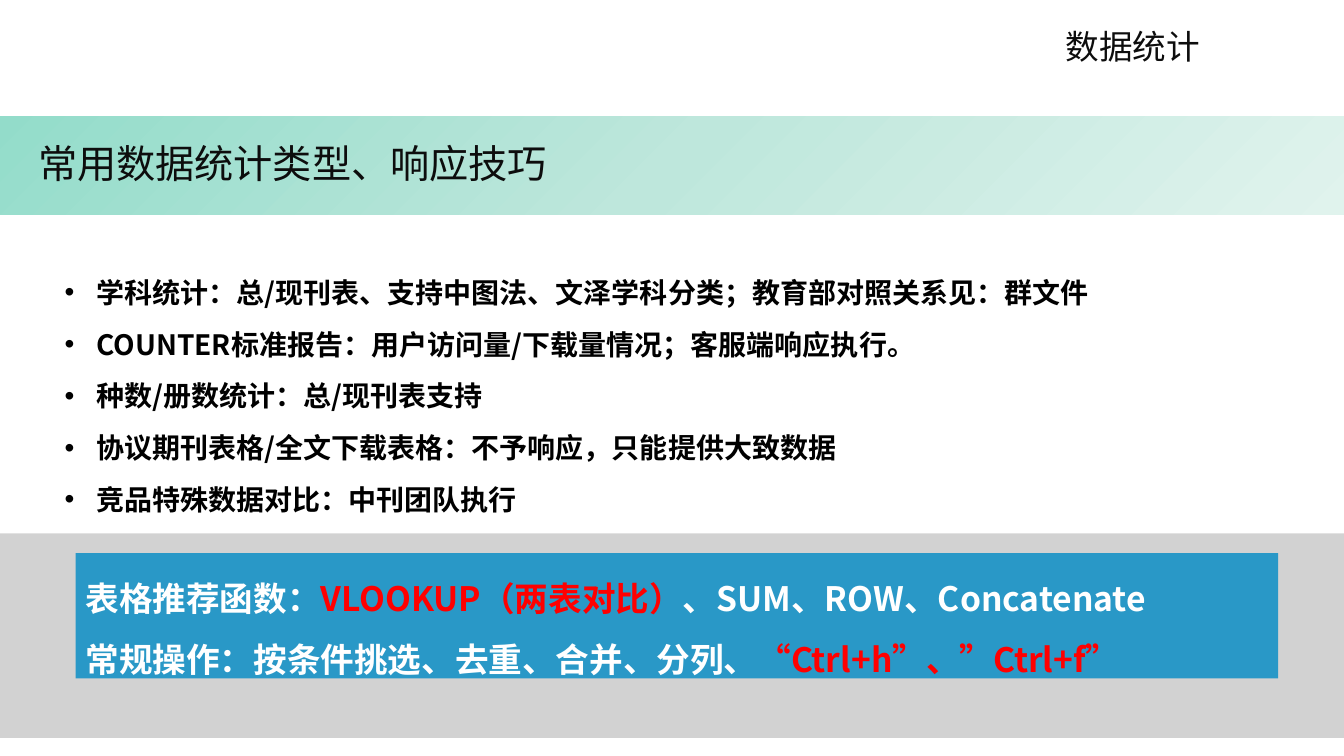
"""Builds the slide on common data statistics types and response techniques."""
from copy import deepcopy
from dataclasses import dataclass

from lxml.etree import SubElement
from pptx import Presentation
from pptx.dml.color import RGBColor as Rgb
from pptx.enum.shapes import MSO_SHAPE as Shape
from pptx.enum.text import MSO_ANCHOR as Anchor, MSO_AUTO_SIZE as AutoSize, PP_ALIGN as Align
from pptx.oxml.ns import qn
from pptx.util import Pt


@dataclass(frozen=True)
class Theme:
    font: str = "Noto Sans CJK SC"
    ink: str = "0D0D0D"
    body: str = "000000"
    light: str = "FFFFFF"
    accent: str = "FF0000"
    panel: str = "2998C7"
    floor: str = "3F3F3F"
    floor_alpha: int = 23
    band: tuple = ((0, "93DCCA"), (0.5, "BEE7DC"), (1, "E0F3ED"))
    title_size: int = 28
    label_size: int = 24
    list_size: int = 20


class SlideBuilder:
    def __init__(self, theme, slide):
        self.theme, self.slide = theme, slide

    def set_text(self, shape, paragraphs, size, bold=False, spacing=None, align=Align.LEFT):
        frame = shape.text_frame
        frame.word_wrap, frame.auto_size = True, AutoSize.NONE
        frame.vertical_anchor = Anchor.TOP
        for number, runs in enumerate(paragraphs):
            line = frame.add_paragraph() if number else frame.paragraphs[0]
            line.alignment, line.line_spacing = align, spacing
            line.space_before = line.space_after = Pt(0)
            for text, color in runs:
                run = line.add_run()
                run.text = text
                font = run.font
                font.name, font.size, font.bold = self.theme.font, Pt(size), bold
                font.color.rgb = Rgb.from_string(color)
                SubElement(font._element, qn("a:ea"), typeface=self.theme.font)

    def placeholder(self, index, box):
        holder = self.slide.placeholders[index]
        holder.left, holder.top, holder.width, holder.height = map(Pt, box)
        holder.element.getparent().append(holder.element)
        return holder

    def title(self, text, box):
        self.set_text(self.placeholder(0, box), [[(text, self.theme.ink)]], self.theme.title_size)

    def bullets(self, items, box, spacing, indent):
        holder = self.placeholder(1, box)
        lines = [[(item, self.theme.body)] for item in items]
        self.set_text(holder, lines, self.theme.list_size, True, Pt(spacing))
        for line in holder.text_frame.paragraphs:
            properties = line._p.get_or_add_pPr()
            properties.set("marL", str(Pt(indent)))
            properties.set("indent", str(-Pt(indent)))

    def label(self, text, box):
        label = self.slide.shapes.add_textbox(*map(Pt, box))
        self.set_text(label, [[(text, self.theme.ink)]], self.theme.label_size,
                      spacing=1.3, align=Align.JUSTIFY)

    def rectangle(self, box):
        rectangle = self.slide.shapes.add_shape(Shape.RECTANGLE, *map(Pt, box))
        rectangle.shadow.inherit = False
        rectangle.line.fill.background()
        return rectangle

    def band(self, box):
        fill = self.rectangle(box).fill
        fill.gradient()
        fill.gradient_angle = 315
        first = fill._fill._gradFill.gsLst[0]
        first.addnext(deepcopy(first))
        for stop, (position, color) in zip(fill.gradient_stops, self.theme.band):
            stop.position = position
            stop.color.rgb = Rgb.from_string(color)

    def floor(self, points):
        start, *rest = points
        outline = self.slide.shapes.build_freeform(*map(Pt, start))
        outline.add_line_segments([tuple(map(Pt, point)) for point in rest])
        floor = outline.convert_to_shape()
        floor.shadow.inherit = False
        floor.line.fill.background()
        floor.fill.solid()
        floor.fill.fore_color.rgb = Rgb.from_string(self.theme.floor)
        color = floor.fill._xPr.find(qn("a:solidFill"))[0]
        SubElement(color, qn("a:alpha"), val=str(self.theme.floor_alpha * 1000))

    def panel(self, paragraphs, box):
        panel = self.rectangle(box)
        panel.fill.solid()
        panel.fill.fore_color.rgb = Rgb.from_string(self.theme.panel)
        self.set_text(panel, paragraphs, self.theme.label_size, True, 1.5)


def main():
    deck = Presentation()
    deck.slide_width, deck.slide_height = Pt(960), Pt(540)
    theme = Theme()
    page = SlideBuilder(theme, deck.slides.add_slide(deck.slide_layouts[1]))

    page.label("数据统计", (754, 6.5, 132, 41))
    page.band((0, 83, 960, 70))
    page.title("常用数据统计类型、响应技巧", (20, 96, 505.5, 41))
    page.bullets([
        "学科统计：总/现刊表、支持中图法、文泽学科分类；教育部对照关系见：群文件",
        "COUNTER标准报告：用户访问量/下载量情况；客服端响应执行。",
        "种数/册数统计：总/现刊表支持",
        "协议期刊表格/全文下载表格：不予响应，只能提供大致数据",
        "竞品特殊数据对比：中刊团队执行",
    ], (39, 180, 846, 189.5), spacing=37, indent=22.5)
    page.floor([(1057.5, 381), (0, 381), (0, 527), (960.5, 527)])
    page.panel([
        [("表格推荐函数：", theme.light), ("VLOOKUP（两表对比）", theme.accent),
         ("、SUM、ROW、Concatenate", theme.light)],
        [("常规操作：按条件挑选、去重、合并、分列、", theme.light),
         ("“Ctrl+h”、”Ctrl+f”", theme.accent)],
    ], (54, 395, 859, 89.5))
    deck.save("out.pptx")


if __name__ == "__main__":
    main()
